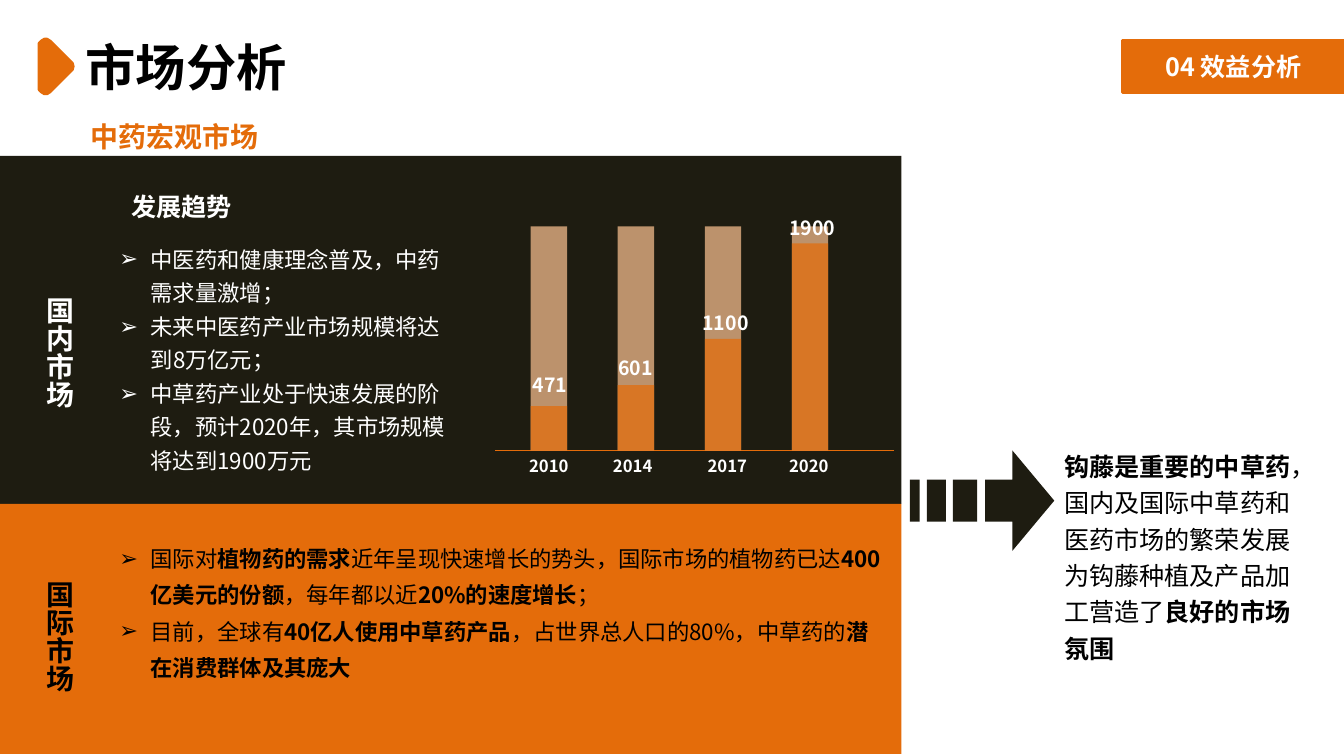
from lxml import etree
from pptx import Presentation
from pptx.dml.color import RGBColor
from pptx.enum.shapes import MSO_CONNECTOR as Connector, MSO_SHAPE as Preset
from pptx.enum.text import MSO_ANCHOR as Anchor, MSO_AUTO_SIZE as AutoSize, PP_ALIGN as Align
from pptx.oxml.ns import qn
from pptx.util import Cm, Pt

FONT = "Noto Sans CJK SC"
COLORS = {"orange": "E46C0A", "dark": "1E1C11", "tan": "FAC090",
          "white": "FFFFFF", "black": "000000"}


def rgb(name):
    return RGBColor.from_string(COLORS[name])


class SlideMaker:
    """Holds the style and the current slide; lengths are in centimetres."""

    def __init__(self, slide):
        self.slide = slide
        self.shapes = slide.shapes

    def start_group(self):
        self.shapes = self.slide.shapes.add_group_shape().shapes

    def end_group(self):
        self.shapes = self.slide.shapes

    def paint(self, shape, fill, line=None, opacity=None):
        shape.shadow.inherit = False
        shape.fill.solid()
        shape.fill.fore_color.rgb = rgb(fill)
        if opacity:
            color = shape._element.spPr.find(qn("a:solidFill")).find(qn("a:srgbClr"))
            etree.SubElement(color, qn("a:alpha")).set("val", str(opacity * 1000))
        if line:
            shape.line.color.rgb = rgb(line)
            shape.line.width = Pt(2)
        else:
            shape.line.fill.background()
        return shape

    def rect(self, x, y, w, h, fill, line=None, opacity=None):
        shape = self.shapes.add_shape(Preset.RECTANGLE, Cm(x), Cm(y), Cm(w), Cm(h))
        return self.paint(shape, fill, line, opacity)

    def outline(self, contours, fill, line=None):
        contours = [[(Cm(x), Cm(y)) for x, y in points] for points in contours]
        builder = self.shapes.build_freeform(*contours[0][0])
        for number, points in enumerate(contours):
            if number:
                builder.move_to(*points[0])
            builder.add_line_segments(points[1:], close=True)
        return self.paint(builder.convert_to_shape(), fill, line)

    def line(self, x1, y1, x2, y2, color):
        rule = self.shapes.add_connector(
            Connector.STRAIGHT, Cm(x1), Cm(y1), Cm(x2), Cm(y2))
        rule.line.color.rgb = rgb(color)
        rule.line.width = Pt(1)
        etree.SubElement(rule._element.spPr, qn("a:effectLst"))

    def fill_frame(self, frame, paragraphs, size, color, align=Align.LEFT,
                   spacing=None, bullet=False):
        """Parts of a paragraph between asterisks are bold."""
        frame.word_wrap = True
        for number, marked in enumerate(paragraphs):
            paragraph = frame.add_paragraph() if number else frame.paragraphs[0]
            paragraph.alignment = align
            if spacing:
                paragraph.line_spacing = Pt(spacing)
            if bullet:
                props = paragraph._p.get_or_add_pPr()
                props.set("marL", str(Cm(0.79)))
                props.set("indent", str(-Cm(0.79)))
                etree.SubElement(props, qn("a:buFont")).set("typeface", "Arial")
                etree.SubElement(props, qn("a:buChar")).set("char", "➢")
            for index, words in enumerate(marked.split("*")):
                if words:
                    run = paragraph.add_run()
                    run.text = words
                    run.font.size = Pt(size)
                    run.font.bold = index % 2 == 1
                    run.font.color.rgb = rgb(color)
                    run.font.name = FONT
                    east_asian = etree.SubElement(run._r.get_or_add_rPr(), qn("a:ea"))
                    east_asian.set("typeface", FONT)

    def title(self, x, y, w, h, words, size):
        holder = self.slide.shapes.title
        holder.left, holder.top, holder.width, holder.height = Cm(x), Cm(y), Cm(w), Cm(h)
        frame = holder.text_frame
        self.fill_frame(frame, [words], size, "black")
        frame.vertical_anchor = Anchor.TOP
        frame.auto_size = AutoSize.NONE

    def text(self, x, y, w, h, paragraphs, size, color, vertical=False, **style):
        frame = self.shapes.add_textbox(Cm(x), Cm(y), Cm(w), Cm(h)).text_frame
        self.fill_frame(frame, paragraphs, size, color, **style)
        frame.auto_size = AutoSize.SHAPE_TO_FIT_TEXT
        if vertical:
            frame._txBody.bodyPr.set("vert", "eaVert")


def main():
    deck = Presentation()
    deck.slide_width, deck.slide_height = Cm(33.96), Cm(19.05)
    maker = SlideMaker(deck.slides.add_slide(deck.slide_layouts[5]))

    # Header: marker, title, subtitle and section tag
    upper_edge = [(1.85, 1.68), (1.83, 1.6), (1.8, 1.57), (1.27, 1.04), (1.19, 0.99),
                  (1.12, 0.99), (1.04, 1.04), (0.99, 1.09), (0.99, 1.17)]
    lower_edge = [(x, 3.36 - y) for x, y in reversed(upper_edge[1:])]
    maker.outline([upper_edge + lower_edge], "orange", "orange")
    maker.title(1.91, 0.79, 7.39, 1.8, "*市场分析*", 36)
    maker.text(2.03, 2.9, 6.81, 1.12, ["*中药宏观市场*"], 20, "orange")
    section = maker.rect(28.37, 1.02, 5.59, 1.32, "orange", "orange").text_frame
    section.vertical_anchor = Anchor.MIDDLE
    maker.fill_frame(section, ["*04 效益分析*"], 18, "white", Align.CENTER)

    # Domestic market panel
    maker.rect(0, 3.94, 22.78, 8.79, "dark")
    maker.text(0.69, 7.26, 1.37, 3.51, ["*国内市场*"], 20, "white", vertical=True)
    maker.text(3.07, 4.7, 4.24, 1.02, ["*发展趋势*"], 18, "white")
    maker.text(2.77, 5.92, 8.99, 6.25, [
        "中医药和健康理念普及，中药需求量激增；",
        "未来中医药产业市场规模将达到8万亿元；",
        "中草药产业处于快速发展的阶段，预计2020年，其市场规模将达到1900万元",
    ], 16, "white", spacing=24, bullet=True)

    # Market size bars: year, its left and alignment; value, its box; bar height
    baseline, full_height = 11.38, 5.66
    market_sizes = [
        ("2010", 12.93, Align.CENTER, "471", 13.21, 9.3, 1.63, 1.12),
        ("2014", 15.24, Align.LEFT, "601", 15.37, 8.86, 1.63, 1.65),
        ("2017", 17.63, Align.LEFT, "1100", 17.5, 7.72, 2.13, 2.82),
        ("2020", 19.69, Align.LEFT, "1900", 19.69, 5.33, 1.75, 5.23),
    ]
    maker.start_group()
    maker.line(12.52, baseline, 22.58, baseline, "orange")
    for column, (year, year_x, align, value, x, y, width, height) in enumerate(market_sizes):
        bar_x = 13.41 + 2.2 * column
        for bar_height, color in ((full_height, "tan"), (height, "orange")):
            maker.rect(bar_x, baseline - bar_height, 0.92, bar_height, color, opacity=72)
        maker.text(year_x, 11.4, 1.88, 0.76, [f"*{year}*"], 12, "white", align=align)
        maker.text(x, y, width, 0.86, [f"*{value}*"], 14, "white")
    maker.end_group()

    # International market panel
    maker.rect(0, 12.73, 22.78, 6.32, "orange")
    maker.text(0.69, 14.43, 1.37, 3.71, ["*国际市场*"], 20, "black", vertical=True)
    maker.text(2.77, 13.41, 19.76, 4.88, [
        "国际对*植物药的需求*近年呈现快速增长的势头，国际市场的植物药已达"
        "*400亿美元的份额*，每年都以近*20%的速度增长*；",
        "目前，全球有*40亿人使用中草药产品*，占世界总人口的80%，中草药的"
        "*潜在消费群体及其庞大*",
    ], 16, "black", spacing=26, bullet=True)

    # Striped arrow to the conclusion
    top, bottom = 12.12, 13.18
    stripes = [[(left, top), (right, top), (right, bottom), (left, bottom)]
               for left, right in ((22.99, 23.24), (23.42, 23.9), (24.08, 24.69))]
    head = [(25.58, 11.38), (26.64, 12.65), (25.58, 13.92), (25.58, bottom),
            (24.89, bottom), (24.89, top), (25.58, top)]
    maker.outline(stripes + [head], "dark")
    maker.text(26.64, 11.13, 6.6, 5.82, [
        "*钩藤是重要的中草药*，国内及国际中草药和医药市场的繁荣发展"
        "为钩藤种植及产品加工营造了*良好的市场氛围*",
    ], 18, "black", spacing=26)

    deck.save("out.pptx")


if __name__ == "__main__":
    main()
